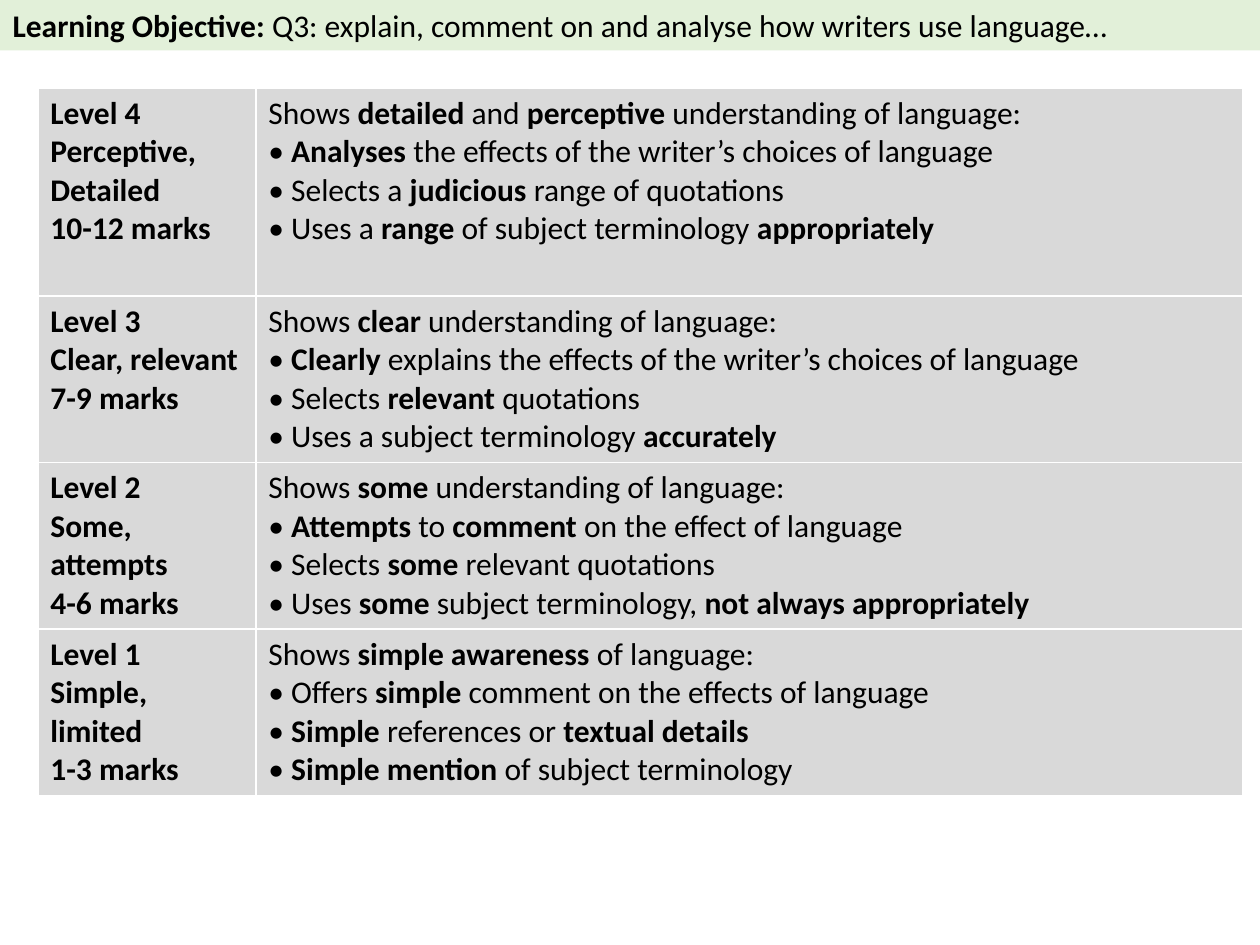
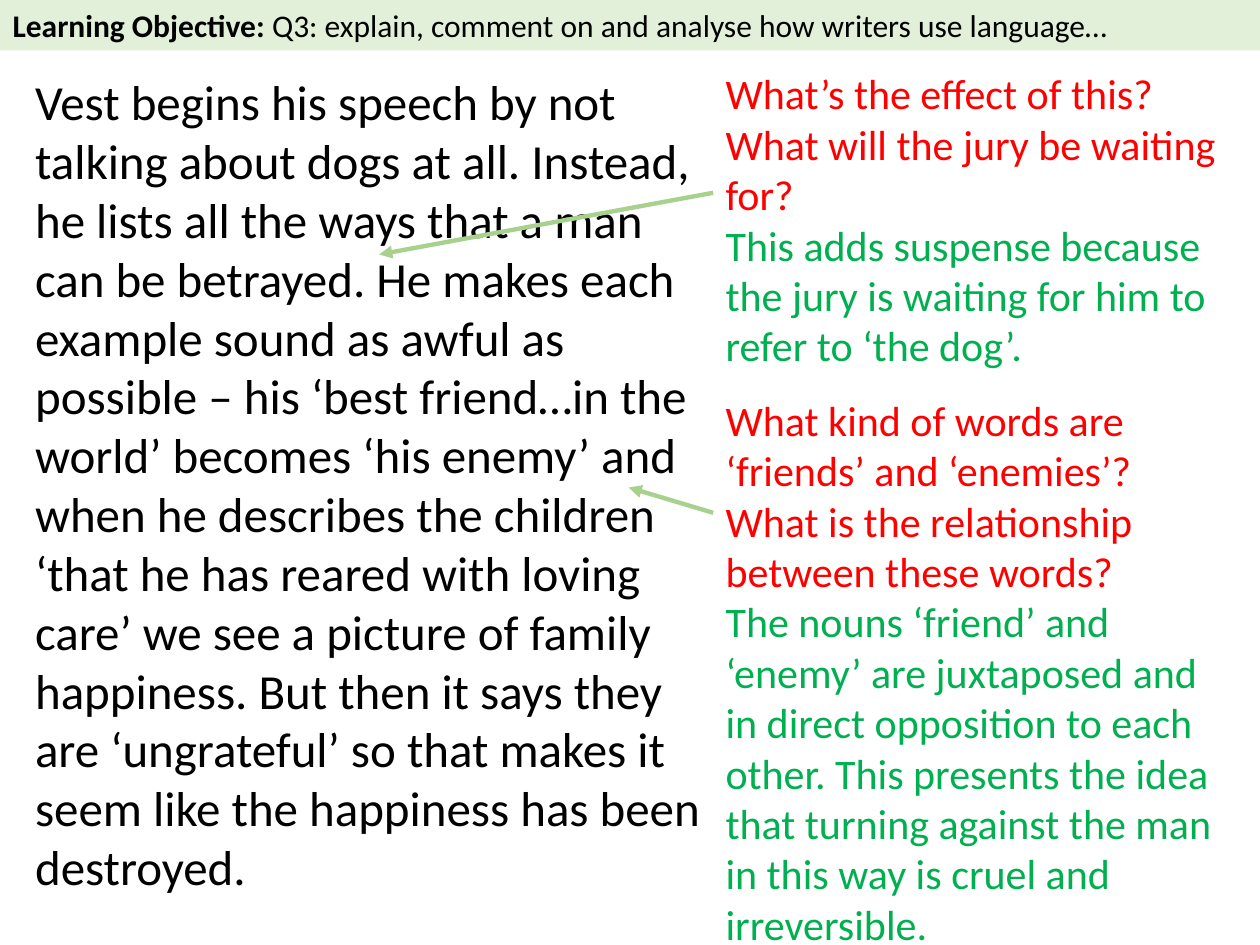
from pptx import Presentation, util as u
from pptx.dml.color import RGBColor
from pptx.enum import shapes, text
from pptx.oxml.ns import qn
from lxml import etree

BLACK = RGBColor(0, 0, 0)
RED = RGBColor(0xFF, 0, 0)
GREEN = RGBColor(0, 0xB0, 0x50)
ARROW = RGBColor(0xA9, 0xD1, 0x8E)
BAND = RGBColor(0xE2, 0xF0, 0xD9)
GREY = RGBColor(0xD9, 0xD9, 0xD9)
FONT = "Calibri"
GOAL = "*Learning Objective: *Q3: explain, comment on and analyse how writers use language…"

LEVELS = [
    (["*Level 4*", "*Perceptive, Detailed*", "*10-12 marks*"],
     ["Shows *detailed* and *perceptive* understanding of language:",
      "• *Analyses* the effects of the writer’s choices of language",
      "• Selects a *judicious* range of quotations",
      "• Uses a *range* of subject terminology *appropriately*"]),
    (["*Level 3*", "*Clear, relevant*", "*7-9 marks*"],
     ["Shows *clear* understanding of language:",
      "• *Clearly* explains the effects of the writer’s choices of language",
      "• Selects *relevant *quotations",
      "• Uses a subject terminology *accurately*"]),
    (["*Level 2*", "*Some, attempts*", "*4-6 marks*"],
     ["Shows *some* understanding of language:",
      "• *Attempts* to *comment* on the effect of language",
      "• Selects *some* relevant quotations",
      "• Uses *some* subject terminology, *not always appropriately*"]),
    (["*Level 1*", "*Simple, limited*", "*1-3 marks*"],
     ["Shows *simple awareness* of language:",
      "• Offers *simple* comment on the effects of language",
      "• *Simple* references or *textual details*",
      "• *Simple mention *of subject terminology"]),
]

ESSAY = (
    "Vest begins his speech by not talking about dogs at all. Instead, he lists "
    "all the ways that a man can be betrayed. He makes each example sound as awful "
    "as possible – his ‘best friend…in the world’ becomes ‘his enemy’ and when he "
    "describes the children ‘that he has reared with loving care’ we see a picture "
    "of family happiness. But then it says they are ‘ungrateful’ so that makes it "
    "seem like the happiness has been destroyed.")

NOTES = [
    (0.49, 2.52,
     "What’s the effect of this? What will the jury be waiting for?",
     "This adds suspense because the jury is waiting for him to refer to ‘the dog’.",
     (1.53, 3.01, 2.02)),
    (3.08, 4.54,
     "What kind of words are ‘friends’ and ‘enemies’? What is the relationship "
     "between these words?",
     "The nouns ‘friend’ and ‘enemy’ are juxtaposed and in direct opposition to each "
     "other. This presents the idea that turning against the man in this way is "
     "cruel and irreversible.",
     (4.07, 4.99, 3.87)),
]


class Deck:
    def __init__(self):
        self.file = Presentation()
        self.file.slide_width = u.Inches(10)
        self.file.slide_height = u.Inches(7.5)
        self.slide = None

    def fill_text(self, frame, lines, size, colors=(BLACK,)):
        frame.word_wrap = True
        for i, line in enumerate(lines):
            para = frame.paragraphs[0] if i == 0 else frame.add_paragraph()
            para.alignment = text.PP_ALIGN.LEFT
            para.font.name = FONT
            para.font.size = u.Pt(size)
            para.font.color.rgb = colors[i % len(colors)]
            for j, part in enumerate(line.split("*")):
                if part:
                    run = para.add_run()
                    run.text = part
                    run.font.bold = j % 2 == 1

    def page(self, title):
        self.slide = self.file.slides.add_slide(self.file.slide_layouts[5])
        band = self.slide.shapes.title
        band.left, band.top = u.Inches(0), u.Inches(0)
        band.width, band.height = u.Inches(10), u.Inches(0.4)
        band.fill.solid()
        band.fill.fore_color.rgb = BAND
        frame = band.text_frame
        frame.auto_size = text.MSO_AUTO_SIZE.NONE
        frame.vertical_anchor = text.MSO_ANCHOR.MIDDLE
        self.fill_text(frame, [title], 18)

    def box(self, left, top, width, height, lines, size, colors=(BLACK,)):
        area = [u.Inches(n) for n in (left, top, width, height)]
        frame = self.slide.shapes.add_textbox(*area).text_frame
        self.fill_text(frame, lines, size, colors)

    def arrow(self, *ends):
        line = self.slide.shapes.add_connector(
            shapes.MSO_CONNECTOR.STRAIGHT, *[u.Inches(n) for n in ends])
        line.line.color.rgb = ARROW
        line.line.width = u.Pt(2.5)
        props = line._element.spPr
        etree.SubElement(props.find(qn("a:ln")), qn("a:tailEnd"), type="triangle")
        etree.SubElement(props, qn("a:effectLst"))

    def table(self, left, top, widths, heights, rows):
        area = [u.Inches(n) for n in (left, top, sum(widths), sum(heights))]
        grid = self.slide.shapes.add_table(len(rows), len(widths), *area).table
        for col, width in zip(grid.columns, widths):
            col.width = u.Inches(width)
        for row, height, cells in zip(grid.rows, heights, rows):
            row.height = u.Inches(height)
            for cell, lines in zip(row.cells, cells):
                cell.fill.solid()
                cell.fill.fore_color.rgb = GREY
                self.fill_text(cell.text_frame, lines, 18)


def main():
    deck = Deck()
    deck.page(GOAL)
    deck.table(0.3, 0.7, [1.73, 7.83], [1.65] + [1.3] * 3, LEVELS)

    deck.page(GOAL)
    deck.box(0.18, 0.52, 5.48, 6.7, [ESSAY], 28)
    edge = 5.66
    for top, height, ask, reply, (start, tip, end) in NOTES:
        deck.box(edge, top, 4.21, height, [ask, reply], 24, (RED, GREEN))
        deck.arrow(edge, start, tip, end)
    deck.file.save("out.pptx")


if __name__ == "__main__":
    main()
